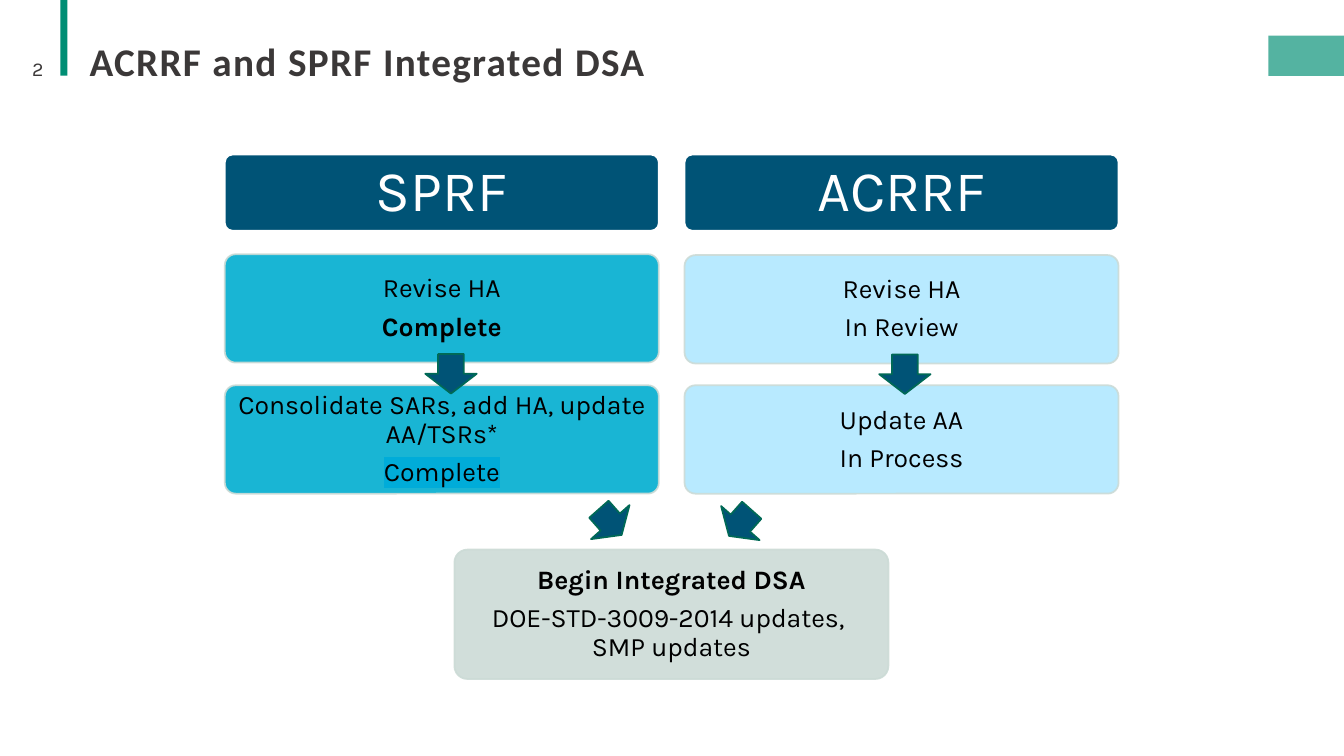
from lxml.etree import SubElement
from pptx import Presentation
from pptx.dml.color import RGBColor
from pptx.enum.shapes import MSO_SHAPE as Kind
from pptx.enum.text import MSO_ANCHOR as Anchor, PP_ALIGN as Align
from pptx.oxml import parse_xml
from pptx.oxml.ns import nsdecls, qn
from pptx.util import Pt

HEX = {"green": "008E74", "text": "3B3838", "navy": "005376", "white": "FFFFFF",
       "cyan": "00ADD0", "pale": "B1E8FF", "gray": "CCDBD6", "edge": "006956",
       "black": "000000", "mark": "00ACD9"}
TITLE = "ACRRF and SPRF Integrated DSA"
LANES = [
    ("SPRF", "cyan", 160.6, 181.6, [
        [("Revise HA", ""), ("Complete", "bold")],
        [("Consolidate SARs, add HA, update AA/TSRs*", ""), ("Complete", "mark")]]),
    ("ACRRF", "pale", 489, 182.2, [
        [("Revise HA", ""), ("In Review", "")],
        [("Update AA", ""), ("In Process", "")]]),
]
GOAL = [("Begin Integrated DSA", "bold"),
        ("DOE-STD-3009-2014 updates, \nSMP updates", "")]
ARROWS = [(303.8, 252.9, 28.2, 0), (628, 253.2, 28.2, 0),
          (417.6, 360.7, 24.5, 318.5), (510.5, 361.4, 24.5, 41.5)]
WIDE, HEAD, STEP, LAST = 310, 54.4, 77.4, 92.4
HEAD_TOP, NEXT_TOP = 110.4, 275.2

deck = Presentation()
deck.slide_width, deck.slide_height = Pt(960), Pt(540)
slide = deck.slides.add_slide(deck.slide_layouts[6])


def paint(fill, name, alpha=100):
    fill.solid()
    fill.fore_color.rgb = RGBColor.from_string(HEX[name])
    if alpha < 100:
        node = fill._xPr.find(qn("a:solidFill")).find(qn("a:srgbClr"))
        SubElement(node, qn("a:alpha")).set("val", str(alpha * 1000))


def draw(kind, x, y, w, h, color, edge=None, alpha=100):
    item = slide.shapes.add_shape(kind, Pt(x), Pt(y), Pt(w), Pt(h))
    item.shadow.inherit = False
    paint(item.fill, color, alpha)
    if edge:
        paint(item.line.fill, edge, alpha)
        item.line.width = Pt(1.25)
    else:
        item.line.fill.background()
    return item


def style(run, size, color, face="Karla", bold=False):
    font = run.font
    font.size, font.name, font.bold = Pt(size), face, bold
    font.color.rgb = RGBColor.from_string(HEX[color])


def write(item, lines, size, color, pad):
    frame = item.text_frame
    frame.word_wrap = True
    frame.vertical_anchor = Anchor.MIDDLE
    frame.margin_left = frame.margin_right = Pt(pad)
    frame.margin_top = frame.margin_bottom = Pt(pad)
    for i, (text, look) in enumerate(lines):
        para = frame.add_paragraph() if i else frame.paragraphs[0]
        para.alignment = Align.CENTER
        para.line_spacing = 0.9
        para.space_after = Pt(size * 0.35)
        for j, part in enumerate(text.split("\n")):
            if j:
                para.add_line_break()
            run = para.add_run()
            run.text = part
            style(run, size, color, bold=look == "bold")
            if look == "mark":
                mark = parse_xml(f'<a:highlight {nsdecls("a")}>'
                                 f'<a:srgbClr val="{HEX["mark"]}"/></a:highlight>')
                run.font._element.find(qn("a:latin")).addprevious(mark)


def card(x, y, h, color, edge, lines, size=19, ink="black", pad=4.5, alpha=90):
    item = draw(Kind.ROUNDED_RECTANGLE, x, y, WIDE, h, color, edge, alpha)
    item.adjustments[0] = 0.1
    write(item, lines, size, ink, pad)


def label(text, x, y, w, h):
    frame = slide.shapes.add_textbox(Pt(x), Pt(y), Pt(w), Pt(h)).text_frame
    frame.word_wrap = True
    para = frame.paragraphs[0]
    run = para.add_run()
    run.text = text
    return frame, para, run


draw(Kind.RECTANGLE, 43.2, 0, 5, 54, "green")
draw(Kind.RECTANGLE, 906, 25.4, 54, 28.8, "green", alpha=67)

frame, para, run = label(TITLE, 56.9, 28, 792, 44.6)
para.line_spacing = 0.85
style(run, 28, "text", "Calibri", True)
run.font._element.set("spc", "100")

frame, para, run = label("2", 5, 34.6, 33.1, 28.8)
frame.vertical_anchor = Anchor.MIDDLE
para.alignment = Align.RIGHT
style(run, 14, "text")

for name, color, x, top, steps in LANES:
    card(x, HEAD_TOP, HEAD, "navy", "white", [(name, "")], 41, "white", 5.8, 100)
    for y, lines in zip((top, NEXT_TOP), steps):
        card(x, y, STEP, color, "gray", lines)
card(324.6, 392.6, LAST, "gray", "gray", GOAL)

for x, y, h, turn in ARROWS:
    draw(Kind.DOWN_ARROW, x, y, 36.7, h, "navy", "edge").rotation = turn

deck.save("out.pptx")
